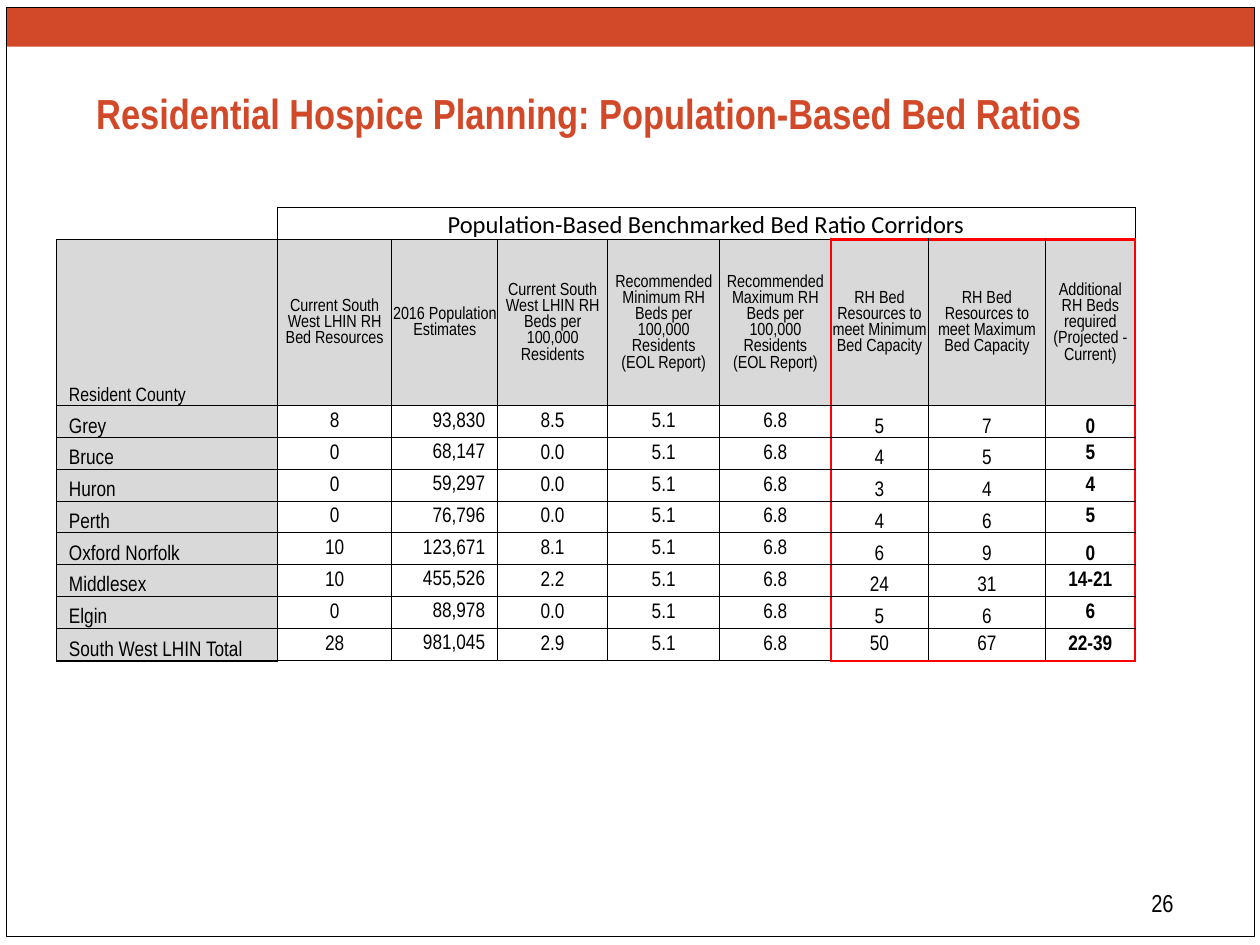
from lxml import etree
from pptx import Presentation
from pptx import util as u
from pptx.dml.color import RGBColor
from pptx.enum import shapes, text
from pptx.oxml.ns import qn

COLORS = {"brand": "D2492A", "ink": "000000", "shade": "D9D9D9", "mark": "FF0000"}
LEFT, CENTER, RIGHT = text.PP_ALIGN.LEFT, text.PP_ALIGN.CENTER, text.PP_ALIGN.RIGHT
TOP, MIDDLE, BOTTOM = (text.MSO_ANCHOR.TOP, text.MSO_ANCHOR.MIDDLE,
                       text.MSO_ANCHOR.BOTTOM)

CAPTION = "Population-Based Benchmarked Bed Ratio Corridors"
HEADERS = [
    "Resident County",
    "Current South West LHIN RH Bed Resources",
    "2016 Population Estimates",
    "Current South West LHIN RH Beds per 100,000 Residents",
    "Recommended Minimum RH Beds per 100,000 Residents\v(EOL Report)",
    "Recommended Maximum RH Beds per 100,000 Residents\v(EOL Report)",
    "RH Bed Resources to meet Minimum Bed Capacity",
    "RH Bed Resources to meet Maximum Bed Capacity",
    "Additional RH Beds required (Projected - Current)",
]
# County, current beds, population, beds per 100,000, minimum, maximum, additional
COUNTIES = [
    ("Grey", "8", "93,830", "8.5", "5", "7", "0"),
    ("Bruce", "0", "68,147", "0.0", "4", "5", "5"),
    ("Huron", "0", "59,297", "0.0", "3", "4", "4"),
    ("Perth", "0", "76,796", "0.0", "4", "6", "5"),
    ("Oxford Norfolk", "10", "123,671", "8.1", "6", "9", "0"),
    ("Middlesex", "10", "455,526", "2.2", "24", "31", "14-21"),
    ("Elgin", "0", "88,978", "0.0", "5", "6", "6"),
    ("South West LHIN Total", "28", "981,045", "2.9", "50", "67", "22-39"),
]
RATIOS = ("5.1", "6.8")  # recommended minimum and maximum, same in every row
COL_WIDTHS = [4.45, 2.31, 2.13, 2.22, 2.26, 2.24, 1.96, 2.37, 1.8]
ROW_HEIGHTS = [0.65, 3.35] + [0.64] * 7 + [0.66]
LAST_ROW, MARK_COL, LAST_COL = len(ROW_HEIGHTS) - 1, 6, len(COL_WIDTHS) - 1


def rgb(name):
    return RGBColor.from_string(COLORS[name])


def write(box, tf, words, size=12, font="Arial Narrow", color="ink", bold=False,
          align=LEFT, anchor=TOP, insets=(0.25, 0.13, 0.25, 0.13)):
    """Fill tf; box (a text frame or a table cell) holds anchor and margins."""
    tf.word_wrap = True
    box.vertical_anchor = anchor
    (box.margin_left, box.margin_top,
     box.margin_right, box.margin_bottom) = map(u.Cm, insets)
    p = tf.paragraphs[0]
    p.text = words
    p.alignment = align
    for r in p.runs:
        r.font.size, r.font.name, r.font.bold = u.Pt(size), font, bold
        r.font.color.rgb = rgb(color)


def edge(row, col, side):
    """Return the colour and width of one side of a table cell."""
    marked = {
        "L": row >= 1 and col == MARK_COL,
        "R": row >= 1 and col in (MARK_COL - 1, LAST_COL),
        "T": row == 1 and col >= MARK_COL,
        "B": row == LAST_ROW and col >= MARK_COL,
    }[side]
    if marked:
        return "mark", 1.5
    if row > 0 and col == 0 and (side == "L" or (side == "B" and row == LAST_ROW)):
        return "ink", 1
    return "ink", 0.5


def cell_format(row, col, words):
    """Return the text format for one table cell."""
    fmt = dict(align=CENTER, anchor=MIDDLE, insets=(0.02, 0.02, 0.02, 0))
    if row == 0:
        fmt.update(size=14, font="Calibri", anchor=BOTTOM)
    elif col == 0:
        fmt.update(size=11 if row == 1 else 12, align=LEFT, anchor=BOTTOM,
                   insets=(0.25, 0.02, 0.02, 0))
    elif row == 1:
        fmt.update(size=10)
    elif col == 2:
        fmt.update(align=RIGHT, insets=(0, 0, 0.25, 0))
    elif col == LAST_COL:
        fmt.update(bold=True, anchor=BOTTOM if words == "0" else MIDDLE)
    elif col >= MARK_COL and row < LAST_ROW:
        fmt.update(anchor=BOTTOM)
    return fmt


class Deck:
    def __init__(self):
        self.prs = Presentation()
        self.prs.slide_width, self.prs.slide_height = u.Cm(25.4), u.Cm(19.05)
        self.s = self.prs.slides.add_slide(self.prs.slide_layouts[6])

    def rect(self, x, y, w, h, fill=None, line=None):
        sp = self.s.shapes.add_shape(shapes.MSO_SHAPE.RECTANGLE,
                                     *map(u.Cm, (x, y, w, h)))
        sp.shadow.inherit = False
        if fill:
            sp.fill.solid()
            sp.fill.fore_color.rgb = rgb(fill)
        else:
            sp.fill.background()
        if line:
            sp.line.color.rgb = rgb(line)
            sp.line.width = u.Pt(0.75)
        else:
            sp.line.fill.background()

    def label(self, x, y, w, h, words, **fmt):
        tf = self.s.shapes.add_textbox(*map(u.Cm, (x, y, w, h))).text_frame
        write(tf, tf, words, **fmt)

    def border(self, cell, side, color, width):
        tcPr = cell._tc.get_or_add_tcPr()
        ln = etree.SubElement(tcPr, qn(f"a:ln{side}"), w=str(u.Pt(width)))
        if color:
            fill = etree.SubElement(ln, qn("a:solidFill"))
            etree.SubElement(fill, qn("a:srgbClr"), val=COLORS[color])
        else:
            etree.SubElement(ln, qn("a:noFill"))

    def table(self, x, y, rows):
        tbl = self.s.shapes.add_table(
            len(rows), len(COL_WIDTHS), u.Cm(x), u.Cm(y),
            u.Cm(sum(COL_WIDTHS)), u.Cm(sum(ROW_HEIGHTS))).table
        tbl.first_row = tbl.horz_banding = False
        for column, width in zip(tbl.columns, COL_WIDTHS):
            column.width = u.Cm(width)
        for line, height in zip(tbl.rows, ROW_HEIGHTS):
            line.height = u.Cm(height)
        tbl.cell(0, 1).merge(tbl.cell(0, LAST_COL))
        for i, row in enumerate(rows):
            for j, words in enumerate(row):
                self.cell(tbl.cell(i, j), i, j, words)

    def cell(self, cell, row, col, words):
        write(cell, cell.text_frame, words, **cell_format(row, col, words))
        if not words:  # keep empty cells from stretching the row
            p = cell.text_frame.paragraphs[0]
            etree.SubElement(p._p, qn("a:endParaRPr"), sz="1200")
        # Borders come before the fill in the cell properties
        for side in "LRTB":
            color, width = edge(row, col, side)
            if row == col == 0 and side in "LT":
                color = None
            self.border(cell, side, color, width)
        if row == 1 or (row > 1 and col == 0):
            cell.fill.solid()
            cell.fill.fore_color.rgb = rgb("shade")
        else:
            cell.fill.background()


def main():
    deck = Deck()

    # Page frame and top band
    deck.rect(0.13, 0.15, 25.16, 0.79, fill="brand")
    deck.rect(0.13, 0.15, 25.16, 18.73, line="ink")

    # Page number and title
    deck.label(18.63, 17.78, 5.28, 1.27, "26", size=14, align=RIGHT)
    deck.label(1.69, 1.63, 21.59, 2.54,
               "Residential Hospice Planning: Population-Based Bed Ratios",
               size=24, color="brand", bold=True)

    # Bed ratio table
    rows = [["", CAPTION] + [""] * (LAST_COL - 1), HEADERS]
    rows += [[*county[:4], *RATIOS, *county[4:]] for county in COUNTIES]
    deck.table(1.14, 4.18, rows)

    deck.prs.save("out.pptx")


if __name__ == "__main__":
    main()
